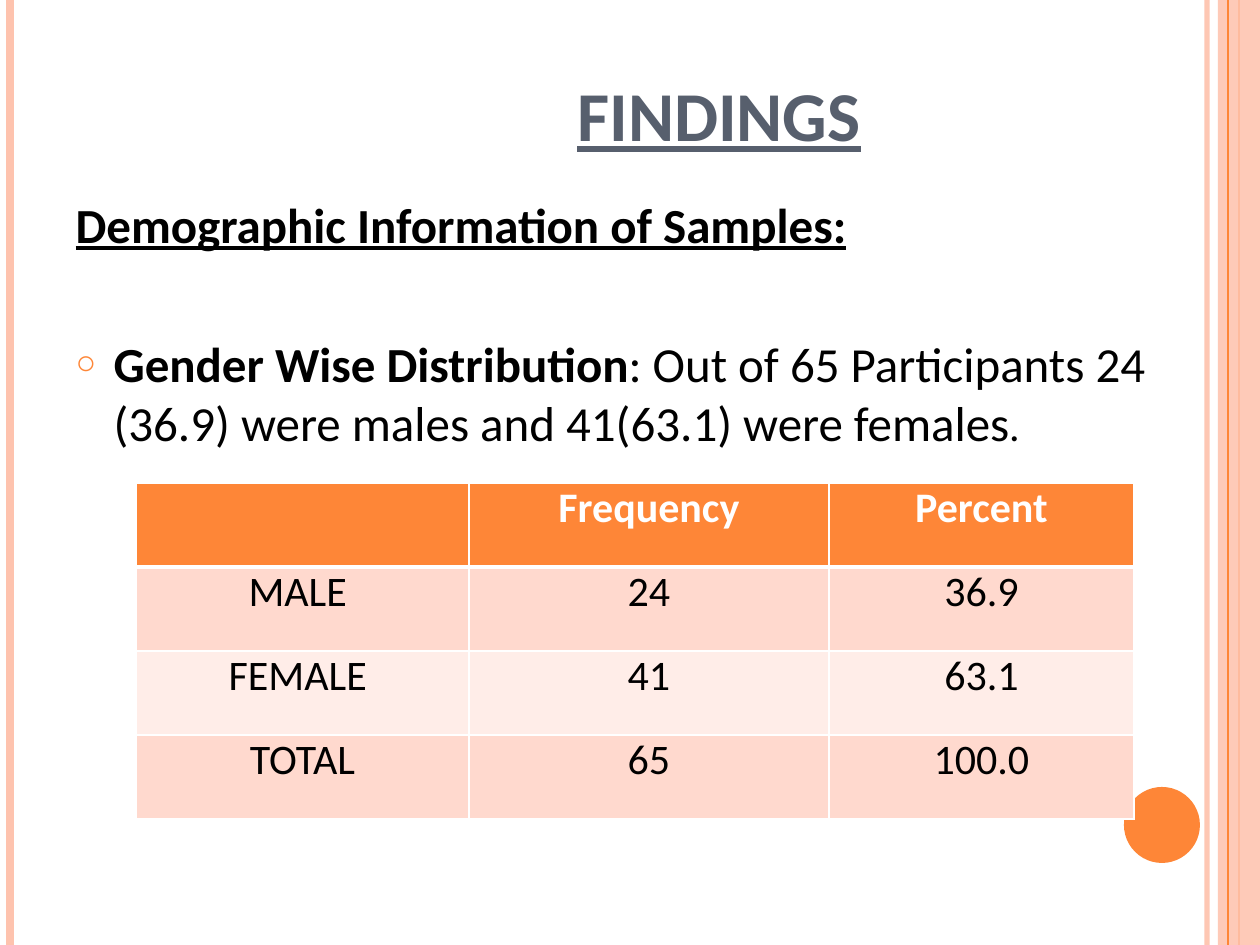
import pptx
import pptx.util
import pptx.dml.color
import pptx.enum.shapes
import pptx.enum.text
import pptx.oxml.ns
import lxml.etree
from dataclasses import dataclass

Pt = pptx.util.Pt
Align = pptx.enum.text.PP_ALIGN
qn = pptx.oxml.ns.qn


@dataclass(frozen=True)
class Theme:
    font: str = "Calibri"
    slate: str = "575F6D"
    ink: str = "000000"
    white: str = "FFFFFF"
    orange: str = "FE8637"
    peach: str = "FEC3AE"
    bands: tuple = ("FFD9CE", "FFEDE8")
    title: int = 40
    body: int = 28
    small: int = 24


THEME = Theme()


def px(count):
    return pptx.util.Emu(round(count * 914400 / 126))


def rgb(code):
    return pptx.dml.color.RGBColor.from_string(code)


def add_sub(parent, tag, **attrs):
    return lxml.etree.SubElement(parent, qn(tag), attrs)


def paint(fill, color, alpha=None):
    fill.solid()
    fill.fore_color.rgb = rgb(color)
    if alpha:
        for node in fill._xPr.iter(qn("a:srgbClr")):
            add_sub(node, "a:alpha", val=str(alpha * 1000))


def style(font, size, color, bold=None, under=None):
    font.name = THEME.font
    font.size = Pt(size)
    font.color.rgb = rgb(color)
    font.bold = bold
    font.underline = under


def place(shape, left, top, width, height):
    shape.left, shape.top = px(left), px(top)
    shape.width, shape.height = px(width), px(height)


def add_rule(slide, x, color, width, alpha=None):
    kind = pptx.enum.shapes.MSO_CONNECTOR.STRAIGHT
    rule = slide.shapes.add_connector(kind, px(x), 0, px(x), px(945))
    paint(rule.line.fill, color, alpha)
    rule.line.width = Pt(width)
    add_sub(rule._element.spPr, "a:effectLst")


def add_block(slide, kind, box, color, alpha=None):
    block = slide.shapes.add_shape(kind, *map(px, box))
    block.shadow.inherit = False
    paint(block.fill, color, alpha)
    block.line.fill.background()


def add_frame(slide):
    kinds = pptx.enum.shapes.MSO_SHAPE
    add_rule(slide, 1207, THEME.peach, 3, 93)
    add_rule(slide, 10, THEME.peach, 4.5)
    add_rule(slide, 1239, THEME.orange, 1.5)
    add_block(slide, kinds.RECTANGLE, (1218, 0, 42, 945), THEME.peach, 87)
    add_rule(slide, 1228, THEME.orange, 0.75)
    add_block(slide, kinds.OVAL, (1124, 787, 76, 76), THEME.orange)


def fill_title(slide, text):
    title = slide.shapes.title
    place(title, 63, 0, 1029, 242)
    frame = title.text_frame
    frame.auto_size = pptx.enum.text.MSO_AUTO_SIZE.NONE
    frame.vertical_anchor = pptx.enum.text.MSO_ANCHOR.BOTTOM
    frame.margin_left, frame.margin_right = px(295), px(12)
    frame.margin_bottom = px(86)
    frame.text = text
    para = frame.paragraphs[0]
    para.alignment = Align.CENTER
    style(para.font, THEME.title, THEME.slate, True, True)


def set_list(para, mark=None):
    props = para._p.get_or_add_pPr()
    props.set("marL", str(px(38)))
    props.set("indent", str(-px(38)))
    if mark:
        tint = add_sub(props, "a:buClr")
        add_sub(tint, "a:srgbClr", val=THEME.orange)
        add_sub(props, "a:buSzPct", val="70000")
        add_sub(props, "a:buChar", char=mark)
    else:
        add_sub(props, "a:buNone")


def fill_body(slide):
    body = slide.placeholders[1]
    place(body, 63, 126, 1134, 766)
    frame = body.text_frame
    frame.auto_size = pptx.enum.text.MSO_AUTO_SIZE.NONE
    frame.margin_top = px(68)
    frame.text = "Demographic Information of Samples:"
    head = frame.paragraphs[0]
    set_list(head)
    head.space_before = Pt(0)
    style(head.font, THEME.body, THEME.ink, True, True)

    item = frame.add_paragraph()
    set_list(item, "○")
    item.space_before = Pt(46)
    style(item.font, THEME.body, THEME.ink)
    lead, rest, stop = [item.add_run() for _ in range(3)]
    lead.text = "Gender Wise Distribution"
    lead.font.bold = True
    rest.text = ": Out of 65 Participants 24 (36.9) were males and 41(63.1) were females"
    stop.text = "."
    stop.font.size = Pt(THEME.small)


def set_edges(cell, head):
    props = cell._tc.get_or_add_tcPr()
    for side in "LRTB":
        width = 3 if head and side == "B" else 1
        edge = add_sub(props, "a:ln" + side, w=str(Pt(width)))
        fill = add_sub(edge, "a:solidFill")
        add_sub(fill, "a:srgbClr", val=THEME.white)


def fill_cell(cell, text, row):
    head = row == 0
    set_edges(cell, head)
    paint(cell.fill, THEME.orange if head else THEME.bands[(row - 1) % 2])
    cell.margin_left = cell.margin_right = px(9)
    cell.margin_top = cell.margin_bottom = 0
    cell.text = text
    para = cell.text_frame.paragraphs[0]
    para.alignment = Align.CENTER
    style(para.font, THEME.small, THEME.white if head else THEME.ink, head)


def add_grid(slide, rows, widths, left, top, step):
    box = map(px, (left, top, sum(widths), step * len(rows)))
    table = slide.shapes.add_table(len(rows), len(widths), *box).table
    for col, width in zip(table.columns, widths):
        col.width = px(width)
    for r, row in enumerate(rows):
        table.rows[r].height = px(step)
        for c, text in enumerate(row):
            fill_cell(table.cell(r, c), text, r)


def main():
    deck = pptx.Presentation()
    deck.slide_width, deck.slide_height = px(1260), px(945)
    slide = deck.slides.add_slide(deck.slide_layouts[1])
    add_frame(slide)
    fill_title(slide, "FINDINGS")
    fill_body(slide)
    rows = [
        ("", "Frequency", "Percent"),
        ("MALE ", "24", "36.9"),
        ("FEMALE ", "41", "63.1"),
        ("TOTAL", "65", "100.0"),
    ]
    add_grid(slide, rows, (333, 360, 305), 136, 483, 84)
    deck.save("out.pptx")


if __name__ == "__main__":
    main()
